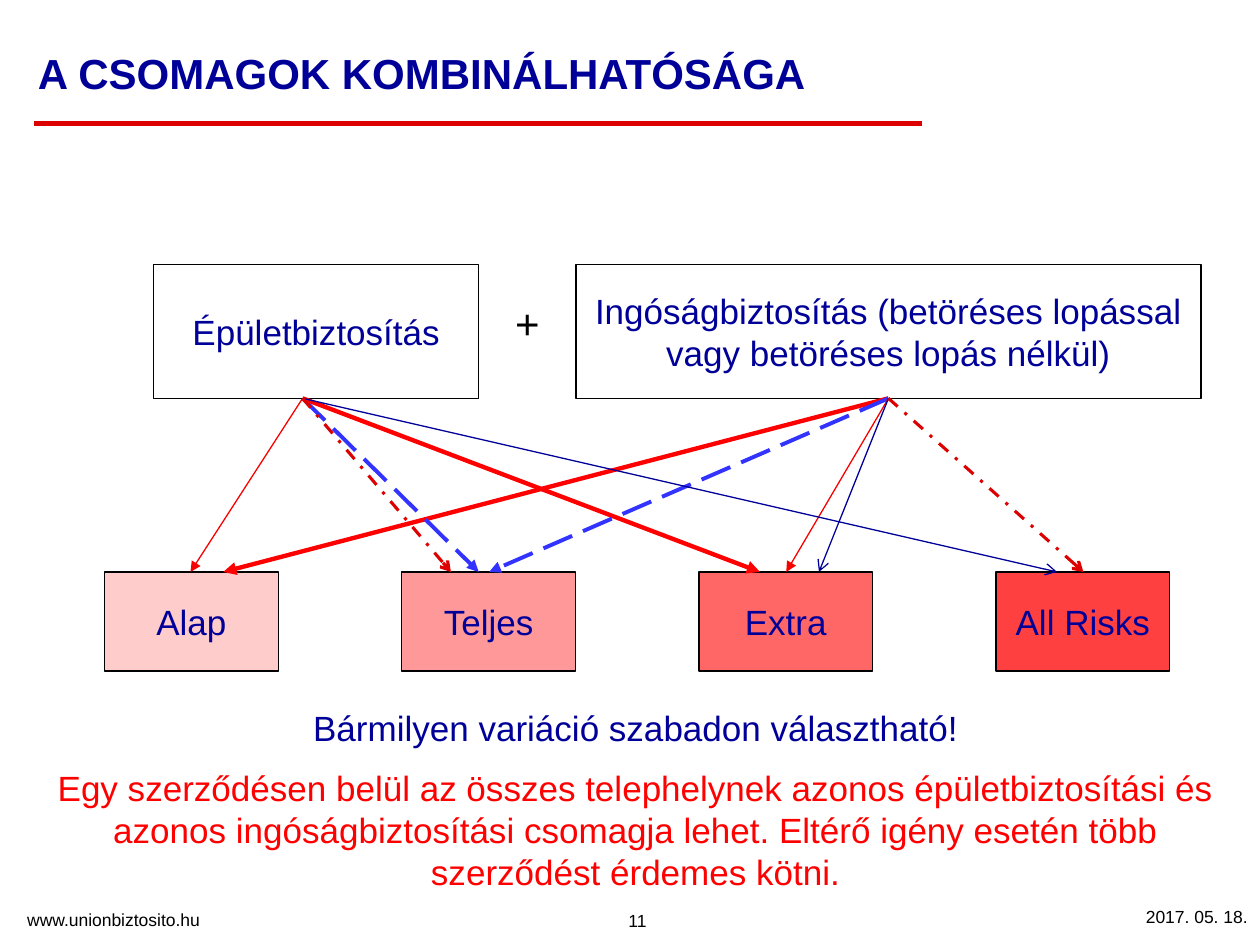
import pptx
import pptx.dml.color
import pptx.enum.dml
import pptx.enum.shapes
import pptx.enum.text
import pptx.oxml.ns
import pptx.util
from lxml import etree
from pptx.util import Cm, Pt

ALIGN = pptx.enum.text.PP_ALIGN
ANCHOR = pptx.enum.text.MSO_ANCHOR
DASH = pptx.enum.dml.MSO_LINE

COLORS = {
    "navy": "000099", "black": "000000", "white": "FFFFFF", "rule": "DD0000",
    "red": "FF0000", "thin_red": "F90000", "blue": "3333FF",
    "alap": "FFCCCC", "teljes": "FF9999", "extra": "FF6666", "all_risks": "FF4040",
}

# Arrow looks: colour, width in points, dash, arrowhead
ARROW_STYLES = {
    "thick": ("red", 2.5, None, "triangle"),
    "dashed": ("blue", 2.25, DASH.LONG_DASH, "triangle"),
    "thin": ("thin_red", 0.75, None, "triangle"),
    "open": ("navy", 0.75, None, "arrow"),
    "dotted": ("rule", 1.75, DASH.DASH_DOT, "arrow"),
}

# Insurance: left, width, arrow start from its left edge, text
INSURANCES = [
    (3.1, 6.55, 3.0, "Épületbiztosítás"),
    (11.61, 12.6, 6.3, "Ingóságbiztosítás (betöréses lopással "
                       "vagy betöréses lopás nélkül)"),
]
PACKAGES = [("Alap", "alap"), ("Teljes", "teljes"),
            ("Extra", "extra"), ("All Risks", "all_risks")]

# Insurance index, package index, arrow end from the package's left edge, style
COMBINATIONS = [
    (1, 0, 2.39, "thick"), (0, 1, 1.55, "dashed"), (0, 2, 1.23, "thick"),
    (0, 0, 1.73, "thin"), (1, 1, 1.76, "dashed"), (1, 2, 1.76, "thin"),
    (1, 2, 2.42, "open"), (0, 3, 1.23, "open"),
    (1, 3, 1.76, "dotted"), (0, 1, 0.99, "dotted"),
]


def rgb(color):
    return pptx.dml.color.RGBColor.from_string(COLORS[color])


def apply(target, formats):
    for attribute, value in formats.items():
        setattr(target, attribute, value)


def write(frame, paragraphs, size, align, anchor, bold=False, **spacing):
    """Fill a text frame with (text, colour) paragraphs."""
    apply(frame, {"word_wrap": True, "vertical_anchor": anchor})
    for number, (text, color) in enumerate(paragraphs):
        paragraph = frame.add_paragraph() if number else frame.paragraphs[0]
        paragraph.text = text
        apply(paragraph, {"alignment": align, **spacing})
        if number:
            paragraph.space_before = Pt(size / 2)
        apply(paragraph.font, {"name": "Arial", "size": Pt(size), "bold": bold})
        paragraph.font.color.rgb = rgb(color)


def add_text(slide, box, paragraphs, size, align, anchor=ANCHOR.TOP):
    label = slide.shapes.add_textbox(*map(Cm, box))
    write(label.text_frame, paragraphs, size, align, anchor)


def add_box(slide, box, text, fill):
    rectangle = slide.shapes.add_shape(
        pptx.enum.shapes.MSO_SHAPE.RECTANGLE, *map(Cm, box))
    rectangle.shadow.inherit = False
    rectangle.fill.solid()
    rectangle.fill.fore_color.rgb = rgb(fill)
    rectangle.line.color.rgb = rgb("black")
    rectangle.line.width = Pt(0.75)
    write(rectangle.text_frame, [(text, "navy")], 20, ALIGN.CENTER, ANCHOR.MIDDLE)


def add_line(slide, start, end, color, width, dash=None, head=None):
    connector = slide.shapes.add_connector(
        pptx.enum.shapes.MSO_CONNECTOR.STRAIGHT, *map(Cm, (*start, *end)))
    connector.line.color.rgb = rgb(color)
    apply(connector.line, {"width": Pt(width), "dash_style": dash})
    if head:
        etree.SubElement(connector.line._get_or_add_ln(),
                         pptx.oxml.ns.qn("a:tailEnd"), type=head)
    etree.SubElement(connector._element.spPr, pptx.oxml.ns.qn("a:effectLst"))


def add_heading(slide, left, top, width, height):
    title = slide.shapes.title
    apply(title, {"left": Cm(left), "top": Cm(top),
                  "width": Cm(width), "height": Cm(height)})
    write(title.text_frame, [("A CSOMAGOK KOMBINÁLHATÓSÁGA", "navy")], 24,
          ALIGN.LEFT, ANCHOR.MIDDLE, bold=True, line_spacing=0.8)
    rule_y = top + height + 0.08
    add_line(slide, (left + 0.18, rule_y), (left + width, rule_y), "rule", 2.5)


def add_diagram(slide, top, height):
    insurance_height, package_height = 2.7, 2.0
    first_package, package_width, pitch = 2.11, 3.5, 5.99
    arrow_top = top + insurance_height
    package_top = top + height - package_height

    # Insurances and the plus sign between them
    for left, width, _, text in INSURANCES:
        add_box(slide, (left, top, width, insurance_height), text, "white")
    add_text(slide, (9.58, top + 0.54, 2.1, 1.27), [("+", "black")], 24, ALIGN.CENTER)

    # Packages
    package_lefts = [first_package + i * pitch for i in range(len(PACKAGES))]
    for left, (text, fill) in zip(package_lefts, PACKAGES):
        add_box(slide, (left, package_top, package_width, package_height), text, fill)

    # Possible combinations
    for insurance, package, offset, style in COMBINATIONS:
        left, _, start, _ = INSURANCES[insurance]
        add_line(slide, (left + start, arrow_top),
                 (package_lefts[package] + offset, package_top), *ARROW_STYLES[style])


def add_conclusion(slide, *box):
    add_text(slide, box, [
        ("Bármilyen variáció szabadon választható!", "navy"),
        ("Egy szerződésen belül az összes telephelynek azonos épületbiztosítási és "
         "azonos ingóságbiztosítási csomagja lehet. Eltérő igény esetén több "
         "szerződést érdemes kötni.", "red"),
    ], 20, ALIGN.CENTER)


def add_footer(slide, top):
    for box, text, align, anchor in [
        ((0.3, top + 0.68, 6.6, 0.69), "www.unionbiztosito.hu", ALIGN.LEFT, ANCHOR.TOP),
        ((8.76, top, 8.18, 1.37), "11", ALIGN.CENTER, ANCHOR.BOTTOM),
        ((20.7, top + 0.6, 4.7, 0.69), "2017. 05. 18.", ALIGN.RIGHT, ANCHOR.TOP),
    ]:
        add_text(slide, box, [(text, "black")], 10, align, anchor)


def main():
    deck = pptx.Presentation()
    apply(deck, {"slide_width": Cm(25.4), "slide_height": Cm(19.05)})
    slide = deck.slides.add_slide(deck.slide_layouts[5])
    add_footer(slide, 17.53)
    add_heading(slide, 0.51, 0.71, 18.08, 1.7)
    add_diagram(slide, 5.33, 8.2)
    add_conclusion(slide, 0.51, 14.12, 24.61, 4.11)
    deck.save("out.pptx")


if __name__ == "__main__":
    main()
